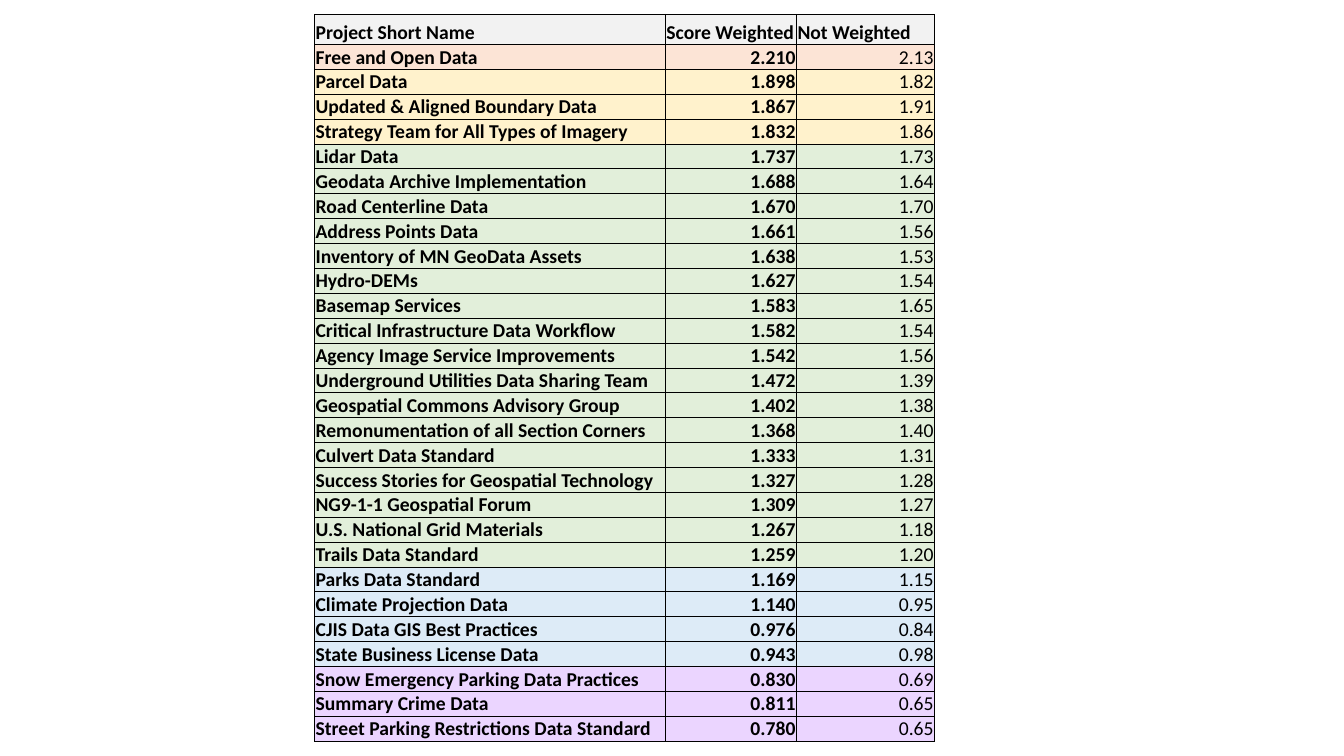
from dataclasses import dataclass

from lxml.etree import SubElement
from pptx import Presentation
from pptx.dml.color import RGBColor
from pptx.enum.text import MSO_ANCHOR as Anchor, PP_ALIGN as Align
from pptx.oxml.ns import qn
from pptx.table import Table, _Cell as Cell
from pptx.util import Emu, Inches, Pt

SLIDE_W, SLIDE_H = Inches(13.33), Inches(7.5)

# Table grid in inches
LEFT, TOP, HEIGHT = 3.12, 0.14, 7.22
COLUMNS = (3.48, 1.3, 1.37)
HEADER_H = 0.3

HEADERS = ("Project Short Name", "Score Weighted", "Not Weighted")
HEADER_FILL = "F2F2F2"
CELL_FORMAT = {
    "margin_left": Inches(0.01),
    "margin_top": Inches(0.01),
    "margin_right": Inches(0.01),
    "margin_bottom": 0,
    "vertical_anchor": Anchor.BOTTOM,
}
FONT_FORMAT = {"name": "Calibri", "size": Pt(14)}


@dataclass(frozen=True)
class Project:
    name: str
    weighted: float
    unweighted: float


@dataclass(frozen=True)
class Tier:
    fill: str
    projects: tuple[Project, ...]


TIERS = (
    Tier("FCE4D6", (Project("Free and Open Data", 2.210, 2.13),)),
    Tier("FFF2CC", (
        Project("Parcel Data", 1.898, 1.82),
        Project("Updated & Aligned Boundary Data", 1.867, 1.91),
        Project("Strategy Team for All Types of Imagery", 1.832, 1.86),
    )),
    Tier("E2EFDA", (
        Project("Lidar Data", 1.737, 1.73),
        Project("Geodata Archive Implementation", 1.688, 1.64),
        Project("Road Centerline Data", 1.670, 1.70),
        Project("Address Points Data", 1.661, 1.56),
        Project("Inventory of MN GeoData Assets", 1.638, 1.53),
        Project("Hydro-DEMs", 1.627, 1.54),
        Project("Basemap Services", 1.583, 1.65),
        Project("Critical Infrastructure Data Workflow", 1.582, 1.54),
        Project("Agency Image Service Improvements", 1.542, 1.56),
        Project("Underground Utilities Data Sharing Team", 1.472, 1.39),
        Project("Geospatial Commons Advisory Group", 1.402, 1.38),
        Project("Remonumentation of all Section Corners", 1.368, 1.40),
        Project("Culvert Data Standard", 1.333, 1.31),
        Project("Success Stories for Geospatial Technology", 1.327, 1.28),
        Project("NG9-1-1 Geospatial Forum", 1.309, 1.27),
        Project("U.S. National Grid Materials", 1.267, 1.18),
        Project("Trails Data Standard", 1.259, 1.20),
    )),
    Tier("DDEBF7", (
        Project("Parks Data Standard", 1.169, 1.15),
        Project("Climate Projection Data", 1.140, 0.95),
        Project("CJIS Data GIS Best Practices", 0.976, 0.84),
        Project("State Business License Data", 0.943, 0.98),
    )),
    Tier("EBD5FF", (
        Project("Snow Emergency Parking Data Practices", 0.830, 0.69),
        Project("Summary Crime Data", 0.811, 0.65),
        Project("Street Parking Restrictions Data Standard", 0.780, 0.65),
    )),
)


def rgb(color: str) -> RGBColor:
    return RGBColor.from_string(color)


def add_borders(cell: Cell, color: str = "000000", width: float = 0.5) -> None:
    tc_pr = cell._tc.get_or_add_tcPr()
    for side in ("L", "R", "T", "B"):
        line = SubElement(tc_pr, qn(f"a:ln{side}"), w=str(Pt(width)))
        fill = SubElement(line, qn("a:solidFill"))
        SubElement(fill, qn("a:srgbClr"), val=color)


def fill_cell(cell: Cell, text: str, fill: str, bold: bool, align: Align) -> None:
    for key, value in CELL_FORMAT.items():
        setattr(cell, key, value)
    add_borders(cell)
    cell.fill.solid()
    cell.fill.fore_color.rgb = rgb(fill)
    p = cell.text_frame.paragraphs[0]
    p.alignment = align
    r = p.add_run()
    r.text = text
    for key, value in FONT_FORMAT.items():
        setattr(r.font, key, value)
    r.font.bold = bold
    r.font.color.rgb = rgb("000000")


def fill_project(table: Table, row: int, project: Project, fill: str) -> None:
    fill_cell(table.cell(row, 0), project.name, fill, True, Align.LEFT)
    fill_cell(table.cell(row, 1), f"{project.weighted:.3f}", fill, True, Align.RIGHT)
    fill_cell(table.cell(row, 2), f"{project.unweighted:.2f}", fill, False, Align.RIGHT)


def main() -> None:
    prs = Presentation()
    prs.slide_width, prs.slide_height = SLIDE_W, SLIDE_H
    s = prs.slides.add_slide(prs.slide_layouts[6])

    # Table frame and grid
    entries = [(project, tier.fill) for tier in TIERS for project in tier.projects]
    frame = s.shapes.add_table(
        len(entries) + 1, len(COLUMNS),
        Inches(LEFT), Inches(TOP), Inches(sum(COLUMNS)), Inches(HEIGHT),
    )
    table = frame.table
    table.horz_banding = False
    table.first_row = False
    for column, width in zip(table.columns, COLUMNS):
        column.width = Inches(width)
    row_h = Emu(Inches(HEIGHT - HEADER_H) // len(entries))
    for row in table.rows:
        row.height = row_h
    table.rows[0].height = Inches(HEADER_H)

    # Header row
    for col, header in enumerate(HEADERS):
        fill_cell(table.cell(0, col), header, HEADER_FILL, True, Align.LEFT)

    # Project rows, coloured by tier
    for row, (project, fill) in enumerate(entries, start=1):
        fill_project(table, row, project, fill)

    prs.save("out.pptx")


if __name__ == "__main__":
    main()
